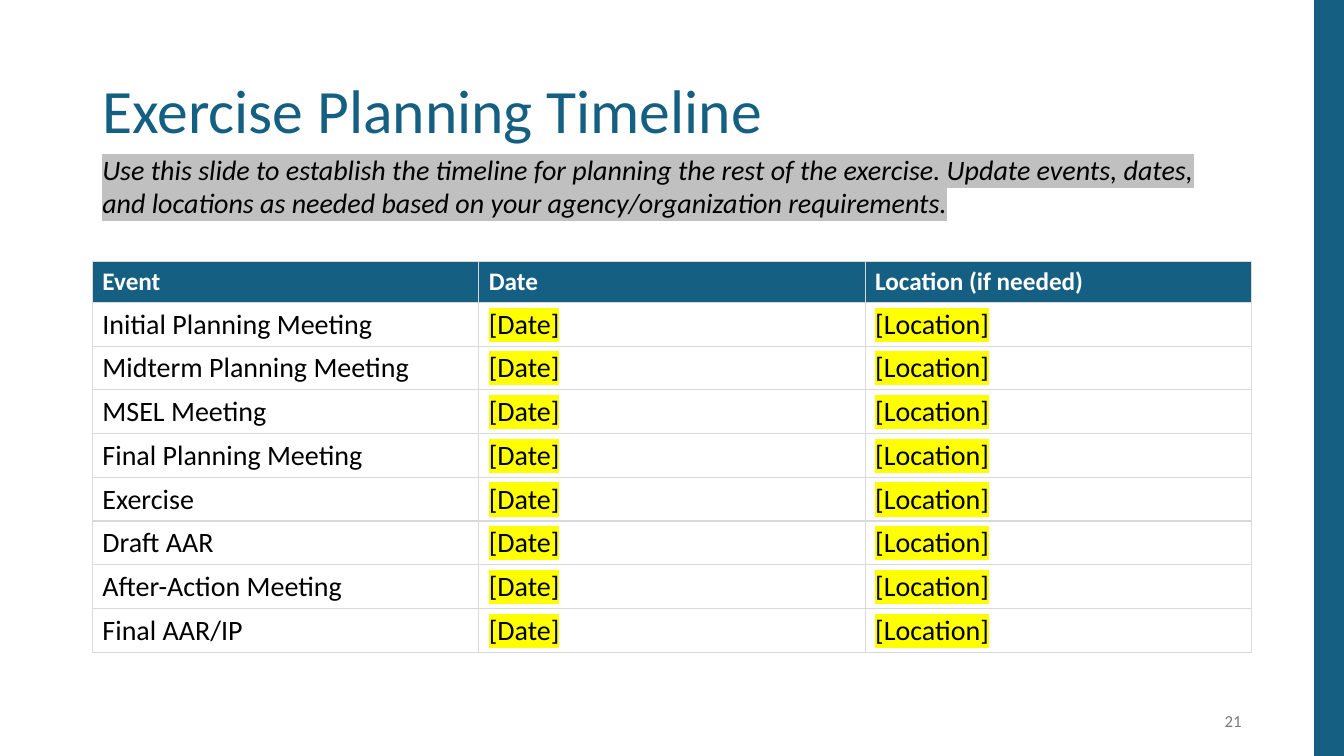
from dataclasses import dataclass

import lxml.etree
import pptx
import pptx.dml.color
import pptx.enum.shapes
import pptx.enum.text
import pptx.oxml
import pptx.oxml.ns
import pptx.util

Pt = pptx.util.Pt
qn = pptx.oxml.ns.qn
Align = pptx.enum.text.PP_ALIGN
Anchor = pptx.enum.text.MSO_ANCHOR

FONT = "Calibri"
COLORS = {
    "blue": "156082",
    "white": "FFFFFF",
    "black": "000000",
    "silver": "C0C0C0",
    "yellow": "FFFF00",
    "border": "D9D9D9",
    "gray": "797979",
}
LEFT, WIDTH = 66, 828
ROW_HEIGHT = 29.2

HEADERS = ["Event", "Date", "Location (if needed)"]
EVENTS = [
    "Initial Planning Meeting",
    "Midterm Planning Meeting",
    "MSEL Meeting",
    "Final Planning Meeting",
    "Exercise",
    "Draft AAR",
    "After-Action Meeting",
    "Final AAR/IP",
]


@dataclass
class TextStyle:
    size: float
    color: str
    bold: bool = False
    italic: bool = False
    highlight: str = ""


@dataclass
class TextBlock:
    text: str
    left: float
    top: float
    width: float
    height: float
    style: TextStyle
    anchor: Anchor = Anchor.MIDDLE
    align: Align = Align.LEFT
    line_spacing: float = 1.0


HEADER_STYLE = TextStyle(18, "white", bold=True)
EVENT_STYLE = TextStyle(20, "black")
FIELD_STYLE = TextStyle(20, "black", highlight="yellow")

TEXT_BLOCKS = [
    TextBlock("Exercise Planning Timeline", LEFT, 28.8, WIDTH, 104.4,
              TextStyle(44, "blue"), line_spacing=0.9),
    TextBlock("Use this slide to establish the timeline for planning the rest of the "
              "exercise. Update events, dates, and locations as needed based on your "
              "agency/organization requirements.", LEFT, 105.1, WIDTH, 55.4,
              TextStyle(20, "black", italic=True, highlight="silver"), Anchor.TOP),
    TextBlock("21", 678, 500.5, 216, 28.8, TextStyle(12, "gray"), align=Align.RIGHT),
]


def rgb(name: str) -> pptx.dml.color.RGBColor:
    return pptx.dml.color.RGBColor.from_string(COLORS[name])


def add_run(paragraph, text: str, style: TextStyle) -> None:
    run = paragraph.add_run()
    run.text = text
    font = run.font
    font.name, font.size = FONT, Pt(style.size)
    font.bold, font.italic = style.bold, style.italic
    font.color.rgb = rgb(style.color)
    if style.highlight:
        highlight = lxml.etree.Element(qn("a:highlight"))
        color = lxml.etree.SubElement(highlight, qn("a:srgbClr"))
        color.set("val", COLORS[style.highlight])
        run._r.get_or_add_rPr().find(qn("a:solidFill")).addnext(highlight)


def add_text_block(slide, block: TextBlock) -> None:
    shape = slide.shapes.add_textbox(
        Pt(block.left), Pt(block.top), Pt(block.width), Pt(block.height))
    frame = shape.text_frame
    frame.word_wrap = True
    frame.vertical_anchor = block.anchor
    paragraph = frame.paragraphs[0]
    paragraph.alignment = block.align
    paragraph.line_spacing = block.line_spacing
    add_run(paragraph, block.text, block.style)


def add_borders(cell) -> None:
    properties = cell._tc.get_or_add_tcPr()
    for index, side in enumerate(("a:lnL", "a:lnR", "a:lnT", "a:lnB")):
        line = lxml.etree.Element(qn(side), w=str(Pt(1)))
        fill = lxml.etree.SubElement(line, qn("a:solidFill"))
        lxml.etree.SubElement(fill, qn("a:srgbClr")).set("val", COLORS["border"])
        properties.insert(index, line)


def fill_cell(cell, text: str, style: TextStyle, fill: str) -> None:
    cell.fill.solid()
    cell.fill.fore_color.rgb = rgb(fill)
    add_borders(cell)
    add_run(cell.text_frame.paragraphs[0], text, style)


def add_timeline_table(slide) -> None:
    row_count = len(EVENTS) + 1
    table = slide.shapes.add_table(
        row_count, len(HEADERS), Pt(LEFT), Pt(186.8), Pt(WIDTH),
        Pt(ROW_HEIGHT * row_count)).table
    table.horz_banding = False
    for row in table.rows:
        row.height = Pt(ROW_HEIGHT)
    for column, header in enumerate(HEADERS):
        fill_cell(table.cell(0, column), header, HEADER_STYLE, "blue")
    for row_number, event in enumerate(EVENTS, start=1):
        fill_cell(table.cell(row_number, 0), event, EVENT_STYLE, "white")
        for column, field in enumerate(("[Date]", "[Location]"), start=1):
            fill_cell(table.cell(row_number, column), field, FIELD_STYLE, "white")


def add_side_bar(slide) -> None:
    shape = slide.shapes.add_shape(
        pptx.enum.shapes.MSO_SHAPE.RECTANGLE, Pt(938.7), Pt(0), Pt(21.3), Pt(540))
    shape.shadow.inherit = False
    shape.fill.solid()
    shape.fill.fore_color.rgb = rgb("blue")
    shape.line.fill.background()


def main() -> None:
    presentation = pptx.Presentation()
    presentation.slide_width, presentation.slide_height = Pt(960), Pt(540)
    slide = presentation.slides.add_slide(presentation.slide_layouts[6])

    # Side bar
    add_side_bar(slide)

    # Title, instructions and page number
    for block in TEXT_BLOCKS:
        add_text_block(slide, block)

    # Timeline
    add_timeline_table(slide)

    presentation.save("out.pptx")


if __name__ == "__main__":
    main()
